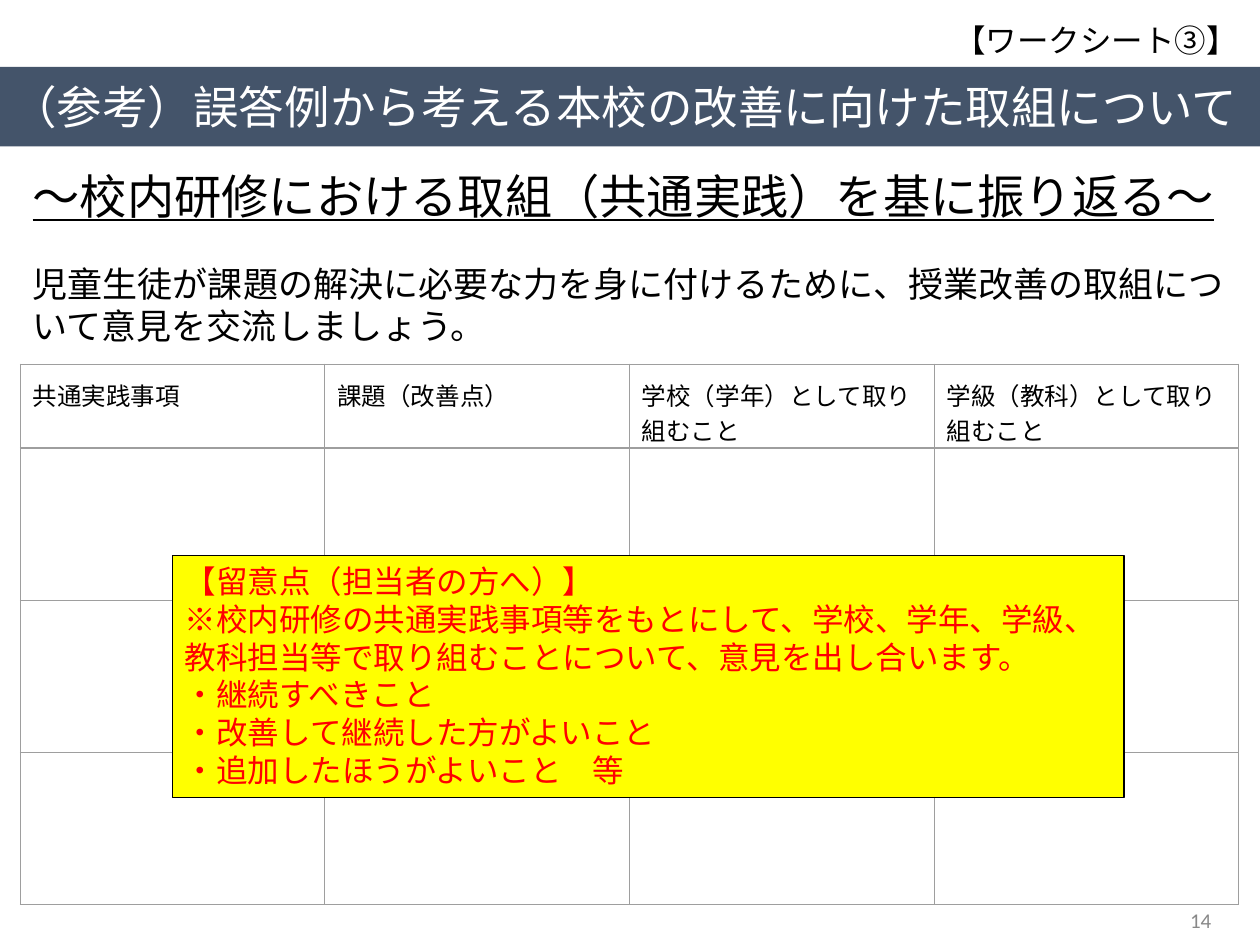
from dataclasses import dataclass

from lxml.etree import SubElement
from pptx import Presentation
from pptx.dml.color import RGBColor
from pptx.enum.shapes import MSO_SHAPE as Preset
from pptx.enum.text import MSO_ANCHOR as Anchor, MSO_AUTO_SIZE as AutoSize, PP_ALIGN as Align
from pptx.oxml.ns import qn
from pptx.slide import Slide
from pptx.text.text import TextFrame
from pptx.util import Cm, Pt


@dataclass(frozen=True)
class Theme:
    body_font: str = "Arial"
    note_font: str = "Calibri"
    ink: str = "000000"
    white: str = "FFFFFF"
    band: str = "44546A"
    note_fill: str = "FFFF00"
    note_ink: str = "FF0000"
    page_ink: str = "888888"
    grid: str = "9E9E9E"
    title_size: int = 26
    subtitle_size: int = 27
    body_size: int = 20
    label_size: int = 18
    cell_size: int = 14
    page_size: int = 12
    rule: float = 0.75


THEME = Theme()


@dataclass(frozen=True)
class Style:
    size: int
    font: str = THEME.body_font
    color: str = THEME.ink
    align: Align = Align.LEFT
    anchor: Anchor = Anchor.TOP
    underline: bool = False
    east_asian: bool = True


@dataclass(frozen=True)
class Box:
    left: float
    top: float
    width: float
    height: float

    def lengths(self) -> tuple[Cm, Cm, Cm, Cm]:
        return Cm(self.left), Cm(self.top), Cm(self.width), Cm(self.height)


@dataclass(frozen=True)
class Caption:
    box: Box
    text: str
    style: Style


CAPTIONS = (
    Caption(Box(0.41, 3.25, 24.56, 1.4), "～校内研修における取組（共通実践）を基に振り返る～",
            Style(THEME.subtitle_size, underline=True)),
    Caption(Box(0.41, 5.16, 24.56, 1.96),
            "児童生徒が課題の解決に必要な力を身に付けるために、授業改善の取組について意見を交流しましょう。",
            Style(THEME.body_size)),
    Caption(Box(15, 0.3, 10.2, 1), "【ワークシート③】", Style(THEME.label_size, align=Align.RIGHT)),
    Caption(Box(18.95, 18.03, 5.72, 1.02), "14",
            Style(THEME.page_size, THEME.note_font, THEME.page_ink, Align.RIGHT, Anchor.MIDDLE)),
)
HEADINGS = ("共通実践事項", "課題（改善点）", "学校（学年）として取り組むこと", "学級（教科）として取り組むこと")
COLUMN_WIDTH = 6.14
ROW_HEIGHTS = (1.68, 3.07, 3.07, 3.07)
NOTES = (
    "【留意点（担当者の方へ）】",
    "※校内研修の共通実践事項等をもとにして、学校、学年、学級、教科担当等で取り組むことについて、意見を出し合います。",
    "・継続すべきこと",
    "・改善して継続した方がよいこと",
    "・追加したほうがよいこと　等",
)


def write(frame: TextFrame, lines: tuple[str, ...], style: Style) -> None:
    for index, line in enumerate(lines):
        paragraph = frame.add_paragraph() if index else frame.paragraphs[0]
        paragraph.alignment = style.align
        paragraph.line_spacing = 1.0
        run = paragraph.add_run()
        run.text = line
        font = run.font
        font.name, font.size = style.font, Pt(style.size)
        font.color.rgb = RGBColor.from_string(style.color)
        if style.underline:
            font.underline = True
        if style.east_asian:
            SubElement(run._r.get_or_add_rPr(), qn("a:ea"), typeface=style.font)


def fill_frame(frame: TextFrame, lines: tuple[str, ...], style: Style) -> None:
    frame.word_wrap = True
    frame.auto_size = AutoSize.NONE
    frame.vertical_anchor = style.anchor
    frame.margin_left = frame.margin_right = Cm(0.25)
    frame.margin_top = frame.margin_bottom = Cm(0.13)
    write(frame, lines, style)


def add_title(slide: Slide) -> None:
    title = slide.shapes.title
    title.left, title.top, title.width, title.height = Box(0, 1.35, 25.4, 1.6).lengths()
    title.fill.solid()
    title.fill.fore_color.rgb = RGBColor.from_string(THEME.band)
    fill_frame(title.text_frame, ("（参考）誤答例から考える本校の改善に向けた取組について",),
               Style(THEME.title_size, color=THEME.white, anchor=Anchor.MIDDLE))
    title.text_frame.margin_left = title.text_frame.margin_right = Cm(0.23)


def add_caption(slide: Slide, caption: Caption) -> None:
    frame = slide.shapes.add_textbox(*caption.box.lengths()).text_frame
    fill_frame(frame, (caption.text,), caption.style)


def add_worksheet(slide: Slide) -> None:
    box = Box(0.41, 7.34, COLUMN_WIDTH * len(HEADINGS), sum(ROW_HEIGHTS))
    table = slide.shapes.add_table(len(ROW_HEIGHTS), len(HEADINGS), *box.lengths()).table
    table.first_row = table.horz_banding = False
    for column in table.columns:
        column.width = Cm(COLUMN_WIDTH)
    for row, height in zip(table.rows, ROW_HEIGHTS):
        row.height = Cm(height)
    for cell in table.iter_cells():
        cell.margin_left = cell.margin_right = cell.margin_top = Cm(0.25)
        cell.margin_bottom = 0
        properties = cell._tc.get_or_add_tcPr()
        for side in ("lnL", "lnR", "lnT", "lnB"):
            edge = SubElement(properties, qn(f"a:{side}"), w=str(Pt(THEME.rule)))
            SubElement(SubElement(edge, qn("a:solidFill")), qn("a:srgbClr"), val=THEME.grid)
        cell.fill.background()
    for column, heading in enumerate(HEADINGS):
        write(table.cell(0, column).text_frame, (heading,), Style(THEME.cell_size, east_asian=False))


def add_note(slide: Slide) -> None:
    note = slide.shapes.add_shape(Preset.RECTANGLE, *Box(3.48, 11.2, 19.18, 4.88).lengths())
    note.shadow.inherit = False
    note.fill.solid()
    note.fill.fore_color.rgb = RGBColor.from_string(THEME.note_fill)
    note.line.color.rgb = RGBColor.from_string(THEME.ink)
    note.line.width = Pt(THEME.rule)
    fill_frame(note.text_frame, NOTES, Style(THEME.label_size, THEME.note_font, THEME.note_ink))


def main() -> None:
    deck = Presentation()
    deck.slide_width, deck.slide_height = Cm(25.4), Cm(19.05)
    slide = deck.slides.add_slide(deck.slide_layouts[5])
    add_title(slide)
    for caption in CAPTIONS:
        add_caption(slide, caption)
    add_worksheet(slide)
    add_note(slide)
    deck.save("out.pptx")


if __name__ == "__main__":
    main()
